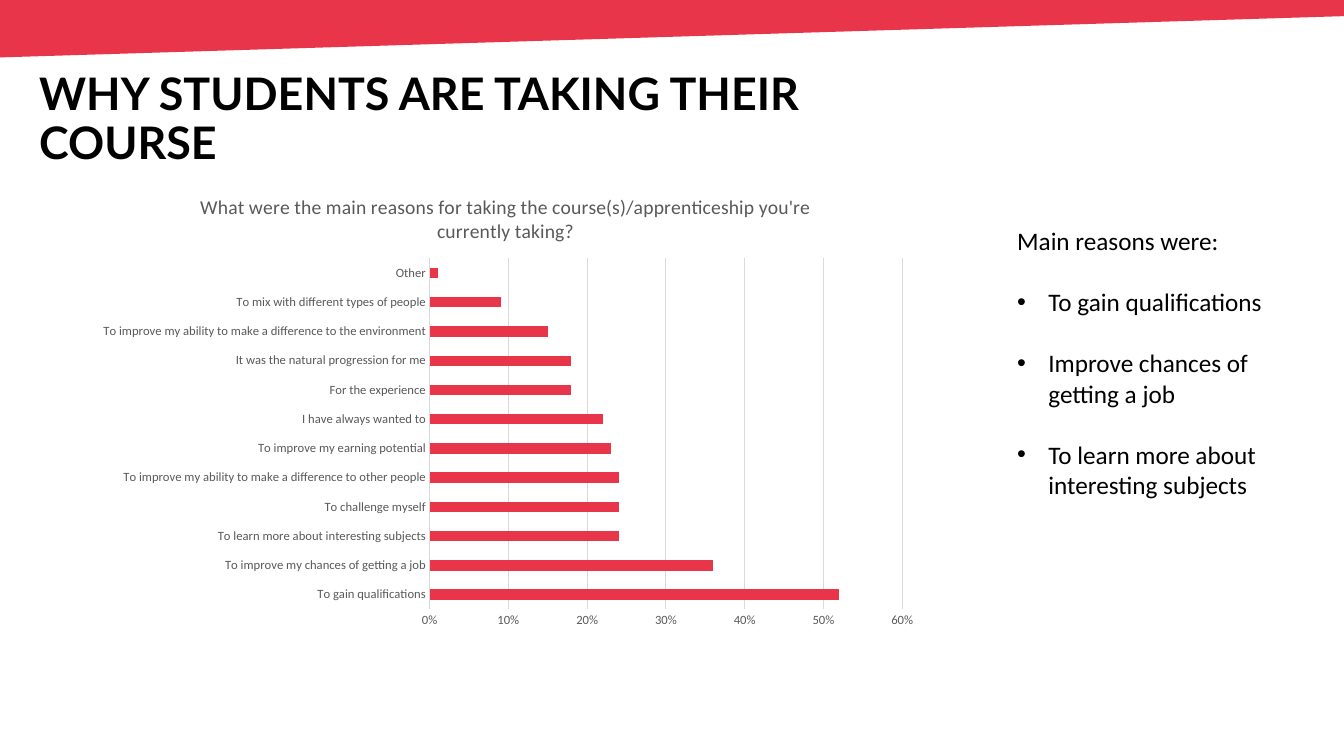
from lxml.etree import SubElement
from pptx import Presentation
from pptx.chart.data import CategoryChartData
from pptx.dml.color import RGBColor
from pptx.enum.chart import XL_CHART_TYPE, XL_TICK_MARK
from pptx.enum.text import MSO_ANCHOR
from pptx.oxml import parse_xml
from pptx.oxml.ns import nsdecls, qn
from pptx.util import Inches, Pt

RED, BLACK, GREY, PALE = "E9354A", "000000", "595959", "D9D9D9"
QUESTION = ("What were the main reasons for taking the course(s)/apprenticeship "
            "you're currently taking?")
REASONS = {
    "To gain qualifications": 0.52,
    "To improve my chances of getting a job": 0.36,
    "To learn more about interesting subjects": 0.24,
    "To challenge myself": 0.24,
    "To improve my ability to make a difference to other people": 0.24,
    "To improve my earning potential": 0.23,
    "I have always wanted to": 0.22,
    "For the experience": 0.18,
    "It was the natural progression for me": 0.18,
    "To improve my ability to make a difference to the environment": 0.15,
    "To mix with different types of people": 0.09,
    "Other": 0.01,
}
MAIN_REASONS = ["To gain qualifications", "Improve chances of getting a job",
                "To learn more about interesting subjects"]
PLOT_LAYOUT = {"x": 0.41, "y": 0.18, "w": 0.56, "h": 0.76}


def color(hex_code):
    """Turn a hex string into a colour."""
    return RGBColor.from_string(hex_code)


def apply(target, values):
    """Set every attribute in a dict on the target."""
    for name, value in values.items():
        setattr(target, name, value)


def set_font(font, size, hex_code, name="Calibri", bold=False):
    """Set the typeface, size, weight and colour of a font."""
    apply(font, {"name": name, "size": Pt(size), "bold": bold})
    font.color.rgb = color(hex_code)


def set_line(line, hex_code):
    """Give a line its colour and a thin width."""
    line.color.rgb = color(hex_code)
    line.width = Pt(0.75)


def add_banner(slide):
    """Draw the slanted band along the top edge."""
    corners = [(0, 0.57), (13.35, 0.16), (13.33, 0)]
    builder = slide.shapes.build_freeform(Inches(-0.01), 0)
    builder.add_line_segments([(Inches(x), Inches(y)) for x, y in corners])
    banner = builder.convert_to_shape()
    banner.shadow.inherit = False
    banner.fill.solid()
    banner.fill.fore_color.rgb = color(RED)
    banner.line.fill.background()


def add_text(slide, box, anchor):
    """Add a wrapping text frame at left, top, width, height."""
    frame = slide.shapes.add_textbox(*map(Inches, box)).text_frame
    apply(frame, {"word_wrap": True, "vertical_anchor": anchor})
    return frame


def add_heading(slide, wording):
    """Add the slide heading."""
    heading = add_text(slide, (0.29, 0.65, 8.37, 1.09), MSO_ANCHOR.MIDDLE).paragraphs[0]
    apply(heading, {"text": wording, "line_spacing": 0.9})
    set_font(heading.font, 32, BLACK, "Lato", True)


def add_summary(slide, intro, points):
    """Add the introductory line and its bulleted points."""
    frame = add_text(slide, (9.99, 2.19, 2.86, 2.83), MSO_ANCHOR.TOP)
    frame.paragraphs[0].text = intro
    set_font(frame.paragraphs[0].font, 18, BLACK)
    for point in points:
        paragraph = frame.add_paragraph()
        properties = paragraph._p.get_or_add_pPr()
        properties.set("marL", str(Inches(0.31)))
        properties.set("indent", str(Inches(-0.31)))
        SubElement(properties, qn("a:buFont")).set("typeface", "Arial")
        SubElement(properties, qn("a:buChar")).set("char", "•")
        apply(paragraph, {"text": point, "space_before": Pt(22)})
        set_font(paragraph.font, 18, BLACK)


def place_plot(chart):
    """Fix the inner plot area as fractions of the chart."""
    plot_area = chart._chartSpace.chart.plotArea
    for layout in plot_area.findall(qn("c:layout")):
        plot_area.remove(layout)
    settings = {"layoutTarget": "inner", "xMode": "edge", "yMode": "edge", **PLOT_LAYOUT}
    values = "".join(f'<c:{key} val="{value}"/>' for key, value in settings.items())
    plot_area.insert(0, parse_xml(
        f'<c:layout {nsdecls("c")}><c:manualLayout>{values}</c:manualLayout></c:layout>'))


def style_axes(chart):
    """Style the category and value axes."""
    categories, percentages = chart.category_axis, chart.value_axis
    for axis in (categories, percentages):
        apply(axis, {"major_tick_mark": XL_TICK_MARK.NONE,
                     "minor_tick_mark": XL_TICK_MARK.NONE})
        set_font(axis.tick_labels.font, 9, GREY)
    categories.has_major_gridlines = False
    set_line(categories.format.line, PALE)
    apply(percentages, {"minimum_scale": 0, "maximum_scale": 0.6, "major_unit": 0.1,
                        "has_major_gridlines": True})
    apply(percentages.tick_labels, {"number_format": "0%", "number_format_is_linked": False})
    percentages.format.line.fill.background()
    set_line(percentages.major_gridlines.format.line, PALE)


def add_reasons_chart(slide):
    """Add the bar chart of reasons."""
    data = CategoryChartData(number_format="0%")
    data.categories = list(REASONS)
    data.add_series("Series 1", REASONS.values())
    box = map(Inches, (0.83, 1.74, 8.37, 4.58))
    chart = slide.shapes.add_chart(XL_CHART_TYPE.BAR_CLUSTERED, *box, data).chart
    apply(chart, {"has_legend": False, "has_title": True})
    set_font(chart.font, 10, BLACK)
    question = chart.chart_title.text_frame.paragraphs[0]
    question.text = QUESTION
    set_font(question.runs[0].font, 14, GREY)
    chart.chart_title.include_in_layout = False
    plot = chart.plots[0]
    apply(plot, {"gap_width": 182, "vary_by_categories": False})
    bars = plot.series[0].format.fill
    bars.solid()
    bars.fore_color.rgb = color(RED)
    style_axes(chart)
    place_plot(chart)


def main():
    """Build and save the slide."""
    deck = Presentation()
    apply(deck, {"slide_width": Inches(13.33), "slide_height": Inches(7.5)})
    slide = deck.slides.add_slide(deck.slide_layouts[6])
    add_banner(slide)
    add_heading(slide, "WHY STUDENTS ARE TAKING THEIR COURSE")
    add_summary(slide, "Main reasons were:", MAIN_REASONS)
    add_reasons_chart(slide)
    deck.save("out.pptx")


if __name__ == "__main__":
    main()
